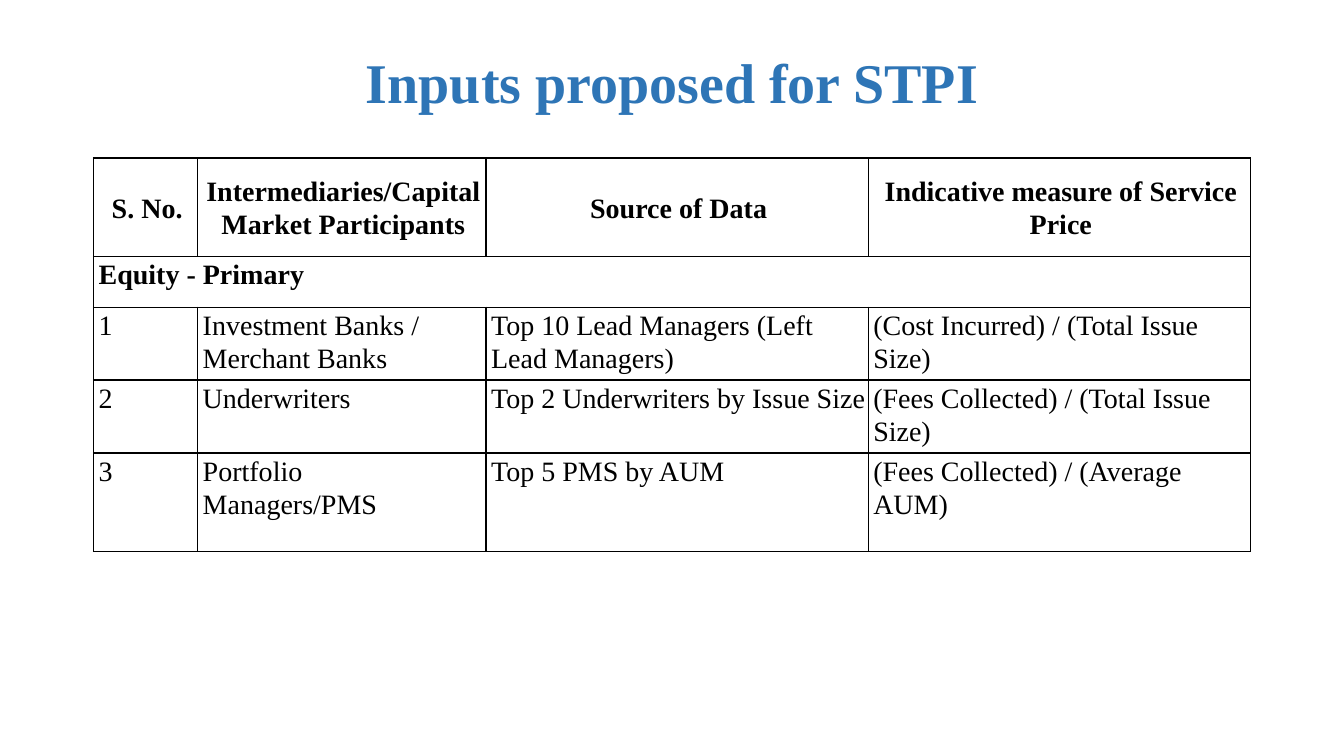
from lxml import etree
from pptx import Presentation
from pptx import util as u
from pptx.dml import color
from pptx.enum import text
from pptx.oxml import ns

COLORS = {"title": "2E75B6", "ink": "000000"}
FONT = "Times New Roman"
COLUMN_WIDTHS = [74.4, 206, 273, 273]
ROW_HEIGHTS = [70.6, 36, 45.4, 45.4, 70.6]
SECTION_ROW = 1
INPUTS = [
    ["S. No.", "Intermediaries/Capital Market Participants", "Source of Data",
     "Indicative measure of Service Price"],
    ["Equity - Primary", "", "", ""],
    ["1", "Investment Banks / Merchant Banks", "Top 10 Lead Managers (Left Lead Managers)",
     "(Cost Incurred) / (Total Issue Size)"],
    ["2", "Underwriters", "Top 2 Underwriters by Issue Size",
     "(Fees Collected) / (Total Issue Size)"],
    ["3", "Portfolio\nManagers/PMS", "Top 5 PMS by AUM",
     "(Fees Collected) / (Average AUM)"],
]


def format_text(frame, size, ink, bold, align, spacing):
    """Apply one look to every paragraph and run of a text frame."""
    for paragraph in frame.paragraphs:
        paragraph.alignment = align
        paragraph.line_spacing = spacing
        for run in paragraph.runs:
            run.font.name = FONT
            run.font.size = u.Pt(size)
            run.font.bold = bold
            run.font.color.rgb = color.RGBColor.from_string(COLORS[ink])


def draw_borders(cell, sides):
    """Rule the named sides of a cell and clear the others."""
    properties = cell._tc.get_or_add_tcPr()
    for side in "LRTB":
        line = etree.SubElement(properties, ns.qn(f"a:ln{side}"), w=str(u.Pt(1)))
        if side in sides:
            fill = etree.SubElement(line, ns.qn("a:solidFill"))
            etree.SubElement(fill, ns.qn("a:srgbClr"), val=COLORS["ink"])
        else:
            etree.SubElement(line, ns.qn("a:noFill"))


def add_title(slide, left, top, width, height):
    """Place the centred heading in the given box."""
    heading = slide.shapes.add_textbox(u.Pt(left), u.Pt(top), u.Pt(width), u.Pt(height))
    frame = heading.text_frame
    frame.word_wrap = True
    frame.vertical_anchor = text.MSO_ANCHOR.MIDDLE
    frame.text = "Inputs proposed for STPI"
    format_text(frame, 40, "title", True, text.PP_ALIGN.CENTER, 0.9)


def fill_cell(cell, content, row, column):
    """Write and style one cell according to its place in the table."""
    header = row == 0
    cell.margin_left, cell.margin_top = u.Pt(3.6), u.Pt(0.7)
    cell.margin_right, cell.margin_bottom = u.Pt(1.4), u.Pt(0)
    cell.vertical_anchor = text.MSO_ANCHOR.MIDDLE if header else text.MSO_ANCHOR.TOP
    cell.text_frame.text = content
    format_text(cell.text_frame, 20, "ink", row <= SECTION_ROW,
                text.PP_ALIGN.CENTER if header else text.PP_ALIGN.LEFT, 1.07)
    sides = "LRTB"
    if row == SECTION_ROW:
        sides = "TB" + "L" * (column == 0) + "R" * (column == len(COLUMN_WIDTHS) - 1)
    draw_borders(cell, sides)
    cell.fill.background()


def add_inputs_table(slide, left, top):
    """Place the table of proposed inputs with its corner at the given point."""
    table = slide.shapes.add_table(
        len(ROW_HEIGHTS), len(COLUMN_WIDTHS), u.Pt(left), u.Pt(top),
        u.Pt(sum(COLUMN_WIDTHS)), u.Pt(sum(ROW_HEIGHTS))).table
    table.first_row = table.horz_banding = False
    for column, width in zip(table.columns, COLUMN_WIDTHS):
        column.width = u.Pt(width)
    for row, height in zip(table.rows, ROW_HEIGHTS):
        row.height = u.Pt(height)
    for row, entries in enumerate(INPUTS):
        for column, content in enumerate(entries):
            fill_cell(table.cell(row, column), content, row, column)
    table.cell(SECTION_ROW, 0).merge(table.cell(SECTION_ROW, 1))


def main():
    """Build the slide and save it."""
    deck = Presentation()
    deck.slide_width, deck.slide_height = u.Pt(960), u.Pt(540)
    slide = deck.slides.add_slide(deck.slide_layouts[6])
    add_title(slide, 66, 10, 828, 102)
    add_inputs_table(slide, 66.8, 112.8)
    deck.save("out.pptx")


if __name__ == "__main__":
    main()
